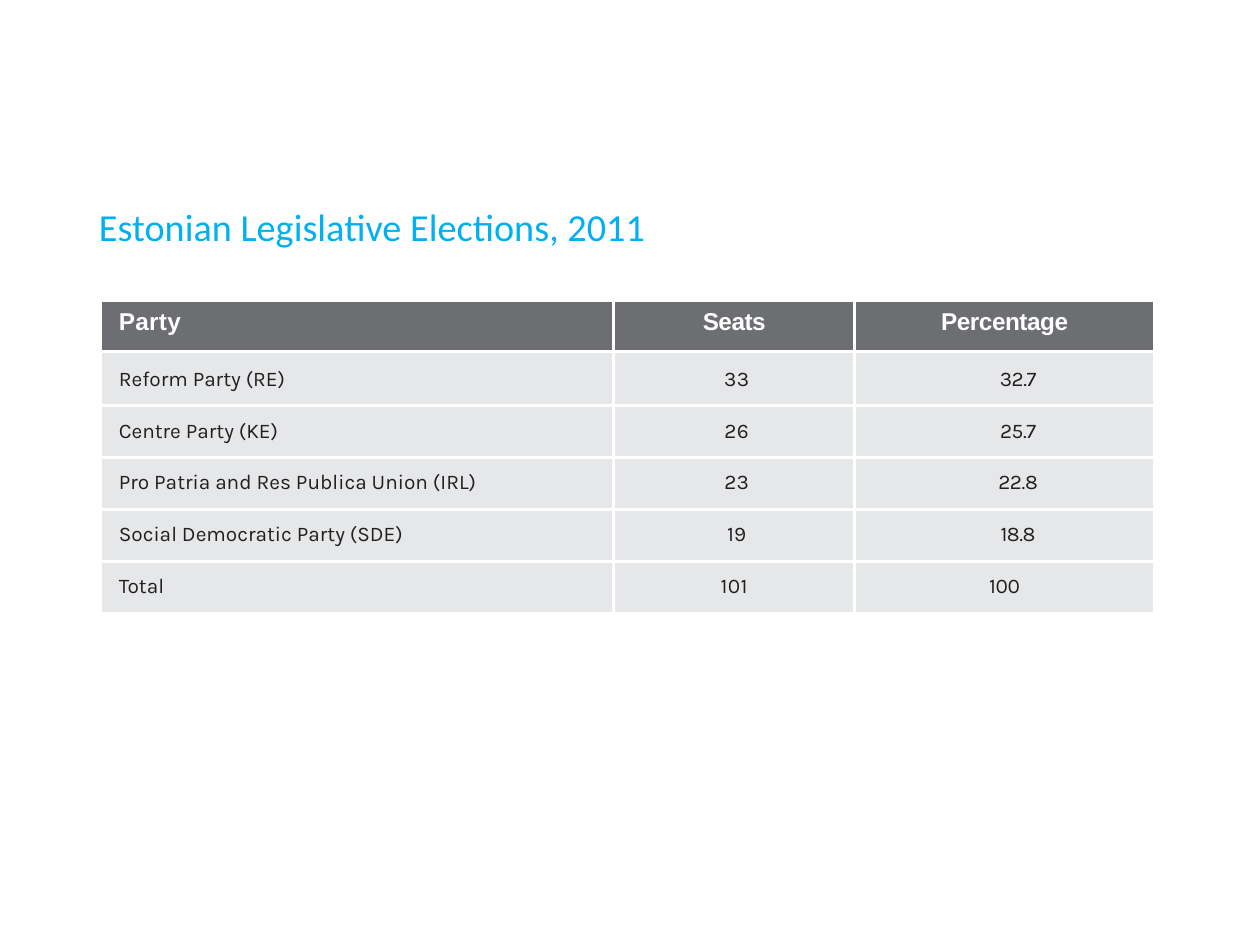
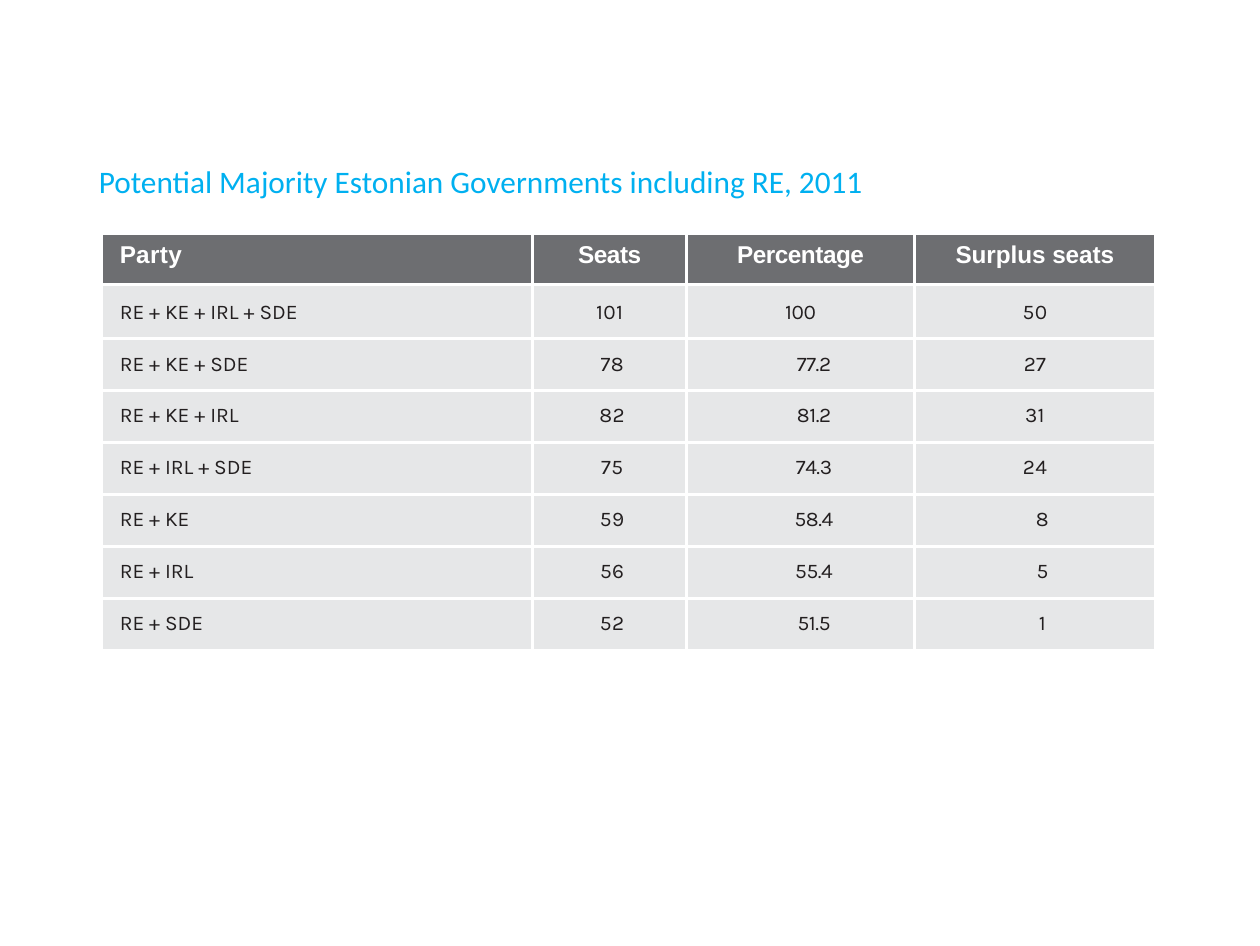
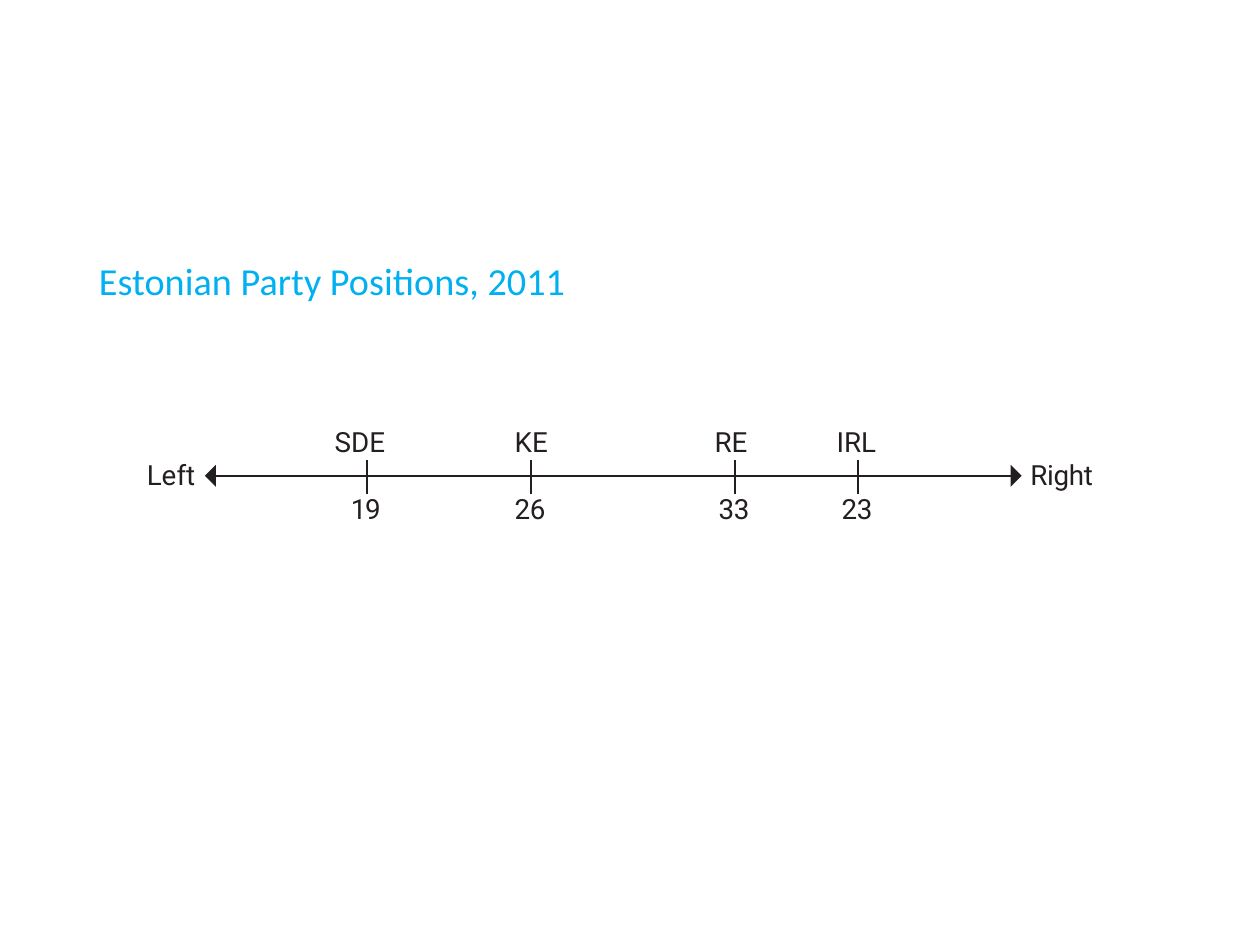
from dataclasses import dataclass, field

from lxml import etree
from pptx import Presentation
from pptx.dml.color import RGBColor
from pptx.enum.shapes import MSO_CONNECTOR
from pptx.enum.text import MSO_ANCHOR, MSO_AUTO_SIZE, PP_ALIGN
from pptx.oxml.ns import qn
from pptx.slide import Slide
from pptx.util import Emu, Pt

LEFT, CENTER = PP_ALIGN.LEFT, PP_ALIGN.CENTER
TOP = MSO_ANCHOR.TOP
NO_AUTOFIT = MSO_AUTO_SIZE.NONE
STRAIGHT = MSO_CONNECTOR.STRAIGHT

EMU_PER_PX = 914400 / 250
SLIDE_WIDTH, SLIDE_HEIGHT = Pt(363), Pt(272.5)
TITLE_ONLY = 5

TITLE_BLUE = "00B0F0"
HEADER_GRAY = "6D6E71"
ROW_GRAY = "E6E7E8"
INK = "231F20"
WHITE = "FFFFFF"

HEADER_HEIGHT, FIRST_ROW_HEIGHT, ROW_HEIGHT = 51, 54, 52
LABEL_INDENT = 18


@dataclass(frozen=True)
class Column:
    """A table column; indents maps a text length to its left margin."""
    heading: str
    width: int
    align: PP_ALIGN = CENTER
    heading_spacing: float = -0.1
    spacing: float = 0.1
    indent: int = 0
    indents: dict[int, int] = field(default_factory=dict)


@dataclass(frozen=True)
class Party:
    name: str
    seats: str
    tick_x: int
    name_x: int
    seats_spacing: float = -0.1


def party_column(width: int) -> Column:
    return Column("Party", width, LEFT, 0.1, 0, LABEL_INDENT)


def seats_column(width: int) -> Column:
    return Column("Seats", width, indents={2: 5})


def percentage_column(width: int) -> Column:
    return Column("Percentage", width, spacing=-0.1, indents={4: 27})


ELECTION_COLUMNS = [party_column(513), seats_column(241), percentage_column(300)]
ELECTION_ROWS = [
    ("Reform Party (RE)", "33", "32.7"),
    ("Centre Party (KE)", "26", "25.7"),
    ("Pro Patria and Res Publica Union (IRL)", "23", "22.8"),
    ("Social Democratic Party (SDE)", "19", "18.8"),
    ("Total", "101", "100"),
]

GOVERNMENT_COLUMNS = [
    party_column(431),
    seats_column(154),
    percentage_column(228),
    Column("Surplus seats", 241, heading_spacing=0, indents={1: 15}),
]
GOVERNMENT_ROWS = [
    ("RE + KE + IRL + SDE", "101", "100", "50"),
    ("RE + KE + SDE", "78", "77.2", "27"),
    ("RE + KE + IRL", "82", "81.2", "31"),
    ("RE + IRL + SDE", "75", "74.3", "24"),
    ("RE + KE", "59", "58.4", "8"),
    ("RE + IRL", "56", "55.4", "5"),
    ("RE + SDE", "52", "51.5", "1"),
]

PARTIES = [
    Party("SDE", "19", 367, 332, -0.4),
    Party("KE", "26", 531, 512),
    Party("RE", "33", 735, 712),
    Party("IRL", "23", 858, 834),
]


def px(length: int) -> Emu:
    return Emu(round(length * EMU_PER_PX))


def color(hex_text: str) -> RGBColor:
    return RGBColor.from_string(hex_text)


def write_text(text_frame, text: str, *, font: str, size: float, ink: str,
               bold: bool = False, align: PP_ALIGN = LEFT,
               spacing: float = 0, before: float = 0) -> None:
    paragraph = text_frame.paragraphs[0]
    paragraph.alignment = align
    paragraph.space_before = Pt(before)
    run = paragraph.add_run()
    run.text = text
    run.font.name = font
    run.font.size = Pt(size)
    run.font.bold = bold
    run.font.color.rgb = color(ink)
    if spacing:
        run.font._element.set("spc", str(round(spacing * 100)))


def set_frame(text_frame) -> None:
    """Top-anchored wrapping text with narrow margins."""
    text_frame.word_wrap = True
    text_frame.auto_size = NO_AUTOFIT
    text_frame.vertical_anchor = TOP
    text_frame.margin_left = text_frame.margin_top = px(3)
    text_frame.margin_right = text_frame.margin_bottom = 0


def add_titled_slide(presentation, text: str, top: int, width: int,
                     size: float) -> Slide:
    slide = presentation.slides.add_slide(presentation.slide_layouts[TITLE_ONLY])
    title = slide.shapes.title
    title.left, title.top = px(96), px(top)
    title.width, title.height = px(width), px(50)
    set_frame(title.text_frame)
    write_text(title.text_frame, text, font="Calibri", size=size,
               ink=TITLE_BLUE, before=0.9)
    return slide


def add_label(slide: Slide, text: str, left: int, top: int,
              spacing: float = 0) -> None:
    box = slide.shapes.add_textbox(px(left), px(top), px(75), px(40))
    set_frame(box.text_frame)
    write_text(box.text_frame, text, font="Roboto", size=8, ink=INK,
               spacing=spacing, before=1)


def set_borders(cell, sides: list[str], hex_text: str, width: float) -> None:
    properties = cell._tc.get_or_add_tcPr()
    for position, side in enumerate(sides):
        line = etree.Element(qn(f"a:{side}"), w=str(Pt(width)))
        fill = etree.SubElement(line, qn("a:solidFill"))
        etree.SubElement(fill, qn("a:srgbClr"), val=hex_text)
        properties.insert(position, line)


def fill_cell(cell, text: str, fill: str, indent: int, top: int, **text_format) -> None:
    cell.margin_left, cell.margin_top = px(indent), px(top)
    cell.margin_right = cell.margin_bottom = 0
    cell.vertical_anchor = TOP
    cell.fill.solid()
    cell.fill.fore_color.rgb = color(fill)
    write_text(cell.text_frame, text, **text_format)


def add_data_table(slide: Slide, left: int, top: int, columns: list[Column],
                   rows: list[tuple[str, ...]]) -> None:
    heights = [HEADER_HEIGHT, FIRST_ROW_HEIGHT] + [ROW_HEIGHT] * (len(rows) - 1)
    width = sum(column.width for column in columns)
    table = slide.shapes.add_table(len(heights), len(columns), px(left), px(top),
                                   px(width), px(sum(heights))).table
    table.first_row = table.horz_banding = False
    for row, height in zip(table.rows, heights):
        row.height = px(height)
    for column_index, column in enumerate(columns):
        table.columns[column_index].width = px(column.width)
        fill_cell(table.cell(0, column_index), column.heading, HEADER_GRAY,
                  column.indent, 8, font="Arial", size=7, ink=WHITE, bold=True,
                  align=column.align, spacing=column.heading_spacing)
        for row_index, values in enumerate(rows, start=1):
            text = values[column_index]
            fill_cell(table.cell(row_index, column_index), text, ROW_GRAY,
                      column.indents.get(len(text), column.indent),
                      15 if row_index == 1 else 13, font="Karla", size=6,
                      ink=INK, align=column.align, spacing=column.spacing)
        for row_index in range(len(heights)):
            inner_sides = {
                "lnL": column_index > 0,
                "lnR": column_index < len(columns) - 1,
                "lnT": row_index > 0,
                "lnB": row_index < len(rows),
            }
            set_borders(table.cell(row_index, column_index),
                        [side for side, inner in inner_sides.items() if inner],
                        WHITE, 1)


def add_line(slide: Slide, x1: int, y1: int, x2: int, y2: int) -> None:
    line = slide.shapes.add_connector(STRAIGHT, px(x1), px(y1), px(x2), px(y2))
    line.line.color.rgb = color(INK)
    line.line.width = Pt(0.5)
    etree.SubElement(line._element.spPr, qn("a:effectLst"))


def add_arrowhead(slide: Slide, tip_x: int, base_x: int, y: int) -> None:
    half_width = 11
    builder = slide.shapes.build_freeform(tip_x, y, scale=EMU_PER_PX)
    builder.add_line_segments([(base_x, y - half_width), (base_x, y + half_width)])
    head = builder.convert_to_shape()
    head.shadow.inherit = False
    head.fill.solid()
    head.fill.fore_color.rgb = color(INK)
    head.line.fill.background()


def add_party_axis(slide: Slide, parties: list[Party]) -> None:
    axis_y, axis_left, axis_right = 476, 216, 1011
    head_length, tick_top, tick_bottom = 11, 460, 494
    add_line(slide, axis_left, axis_y, axis_right, axis_y)
    add_arrowhead(slide, axis_left - head_length, axis_left, axis_y)
    add_arrowhead(slide, axis_right + head_length, axis_right, axis_y)
    for party in parties:
        add_line(slide, party.tick_x, tick_top, party.tick_x, tick_bottom)
        add_label(slide, party.name, party.name_x, 422)
        add_label(slide, party.seats, party.tick_x - 19, 489, party.seats_spacing)
    add_label(slide, "Left", 144, 455)
    add_label(slide, "Right", 1028, 455, -0.1)


def main() -> None:
    presentation = Presentation()
    presentation.slide_width = SLIDE_WIDTH
    presentation.slide_height = SLIDE_HEIGHT

    election = add_titled_slide(
        presentation, "Estonian Legislative Elections, 2011", 200, 573, 11)
    add_data_table(election, 101, 301, ELECTION_COLUMNS, ELECTION_ROWS)

    governments = add_titled_slide(
        presentation, "Potential Majority Estonian Governments including RE, 2011",
        159, 823, 9)
    add_data_table(governments, 102, 234, GOVERNMENT_COLUMNS, GOVERNMENT_ROWS)

    positions = add_titled_slide(
        presentation, "Estonian Party Positions, 2011", 254, 493, 11)
    add_party_axis(positions, PARTIES)

    presentation.save("out.pptx")


if __name__ == "__main__":
    main()
